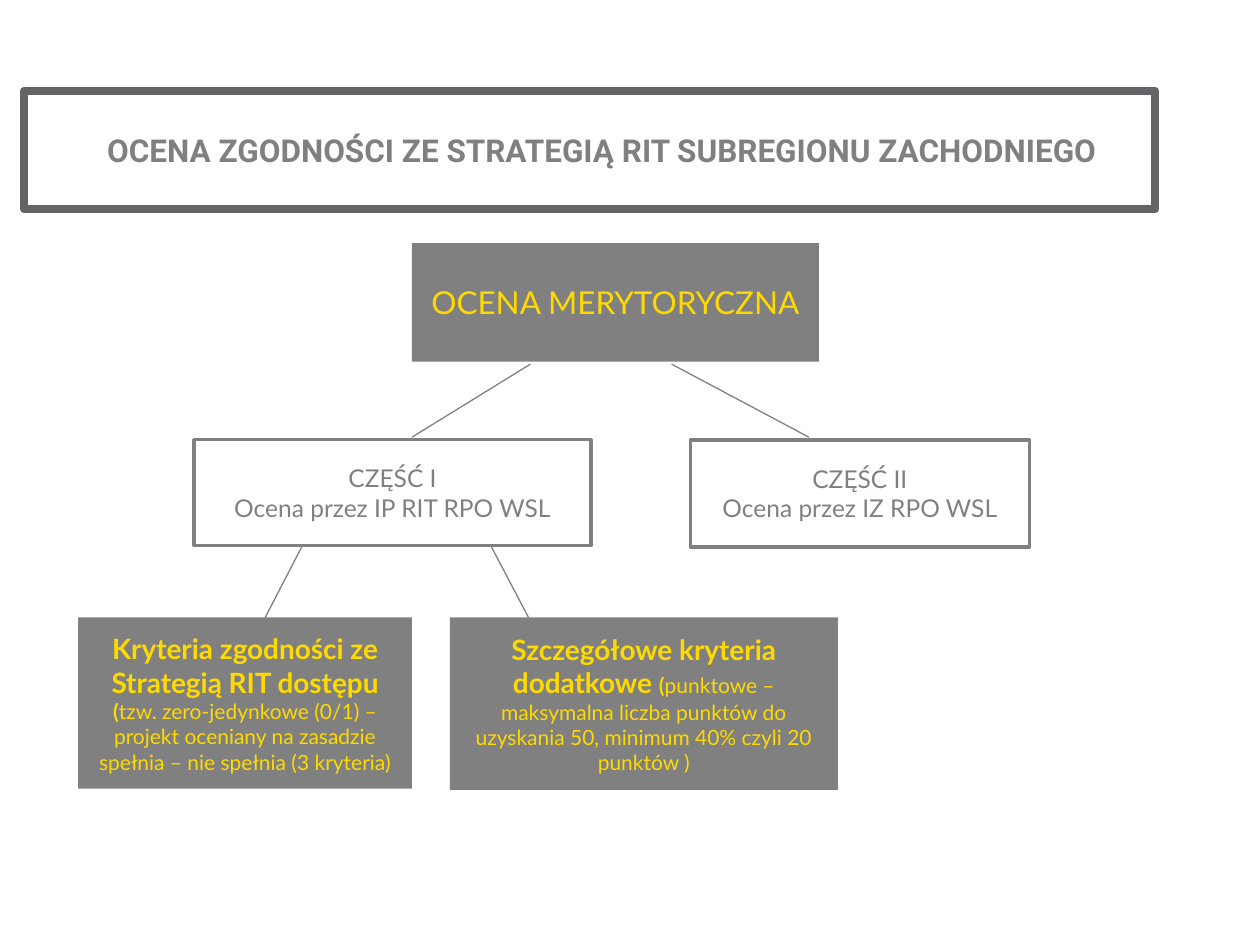
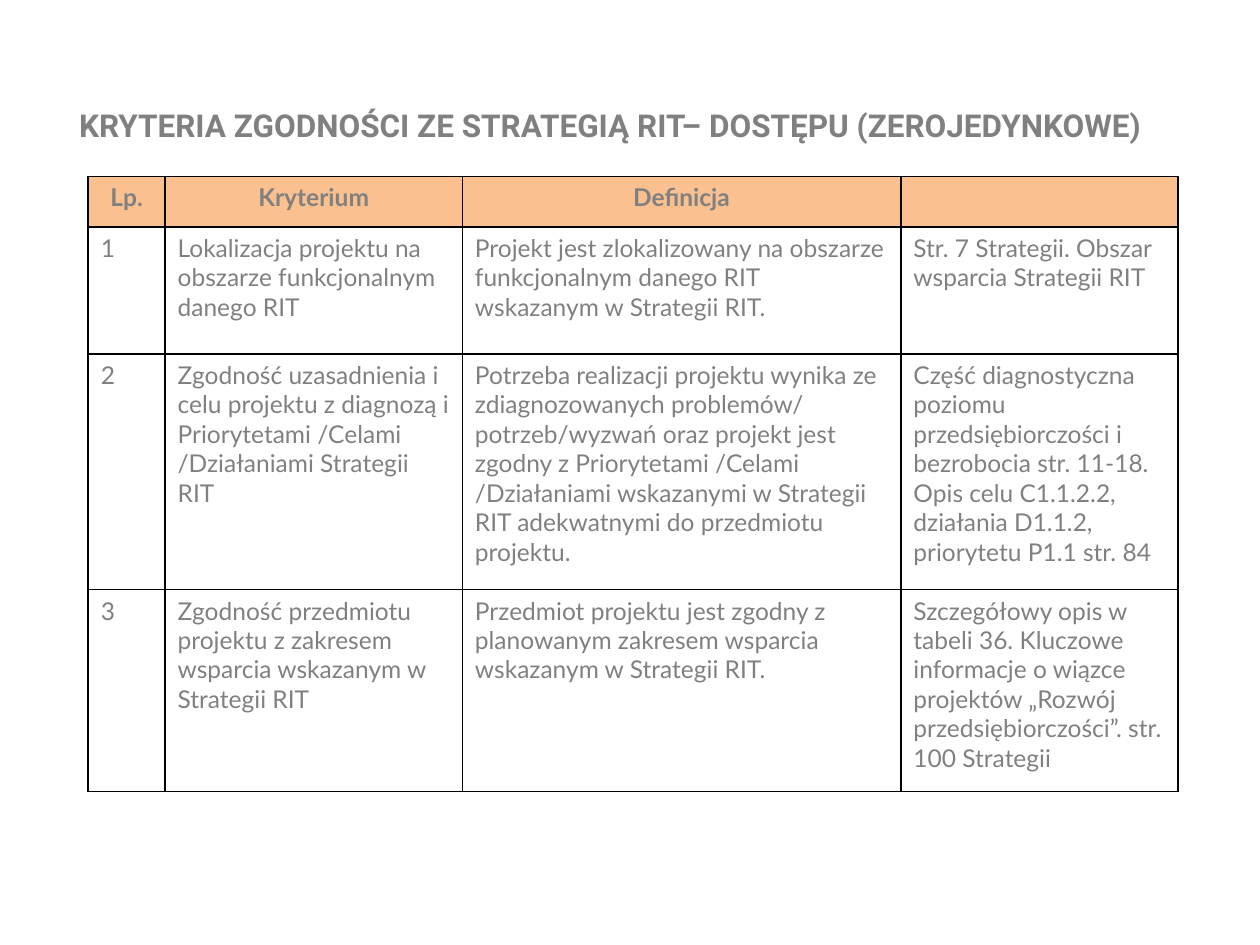
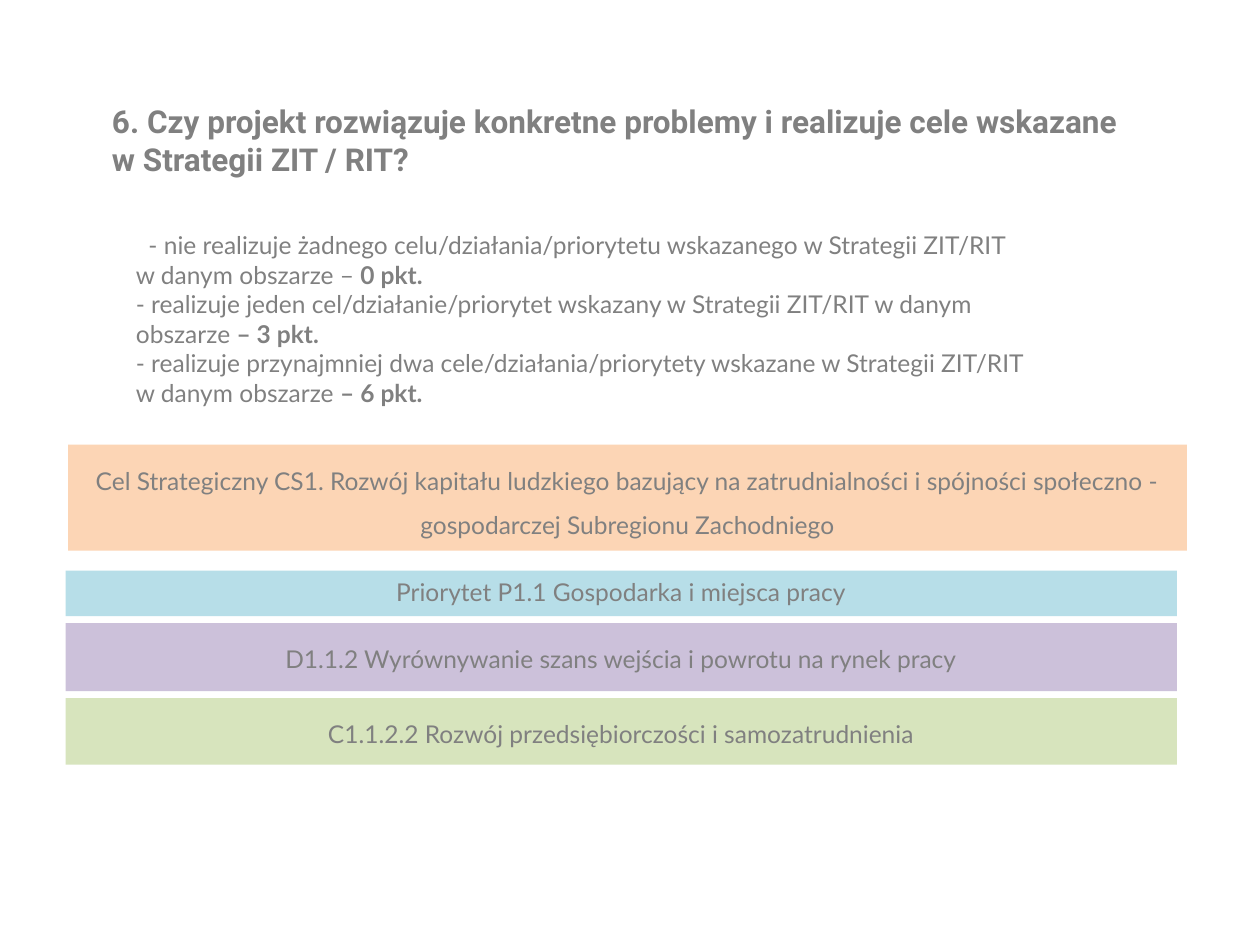
from lxml.etree import SubElement
from pptx import Presentation
from pptx.dml.color import RGBColor
from pptx.enum.shapes import MSO_CONNECTOR, MSO_SHAPE
from pptx.enum.text import MSO_ANCHOR, PP_ALIGN
from pptx.oxml.ns import qn
from pptx.util import Inches, Pt

WIDTH, HEIGHT = Inches(10), Inches(7.5)
COLUMNS, ROWS = 100, 75

COLORS = {
    "grey": "808080", "frame": "636466", "yellow": "FEDA00", "white": "FFFFFF",
    "black": "000000", "header": "FAC090", "peach": "FCD5B5", "blue": "B7DEE8",
    "violet": "CCC1DA", "green": "D7E4BD",
}


def color(name):
    return RGBColor.from_string(COLORS[name])


def across(columns):
    return round(WIDTH * columns / COLUMNS)


def down(rows):
    return round(HEIGHT * rows / ROWS)


class Deck:
    """Style and current slide; places are (left, top, width, height) in grid units."""

    title_font, body_font = "Roboto", "Lato"
    title_size, body_size = 18, 14

    def __init__(self):
        self.presentation = Presentation()
        self.presentation.slide_width = WIDTH
        self.presentation.slide_height = HEIGHT
        self.slide = None

    def new_slide(self):
        blank = self.presentation.slide_layouts[6]
        self.slide = self.presentation.slides.add_slide(blank)

    def place(self, area):
        left, top, width, height = area
        return across(left), down(top), across(width), down(height)

    def fill_text(self, frame, paragraphs, align=PP_ALIGN.LEFT, font=body_font,
                  size=body_size, ink="grey", bold=False, spacing=None):
        """Each paragraph is a text or a list of (text, bold, size) runs."""
        frame.word_wrap = True
        for number, content in enumerate(paragraphs):
            paragraph = frame.paragraphs[0] if number == 0 else frame.add_paragraph()
            paragraph.alignment = align
            if spacing:
                paragraph.line_spacing = spacing
            paragraph.font.size = Pt(size)
            runs = [(content, bold, size)] if isinstance(content, str) else content
            for text, run_bold, run_size in runs:
                run = paragraph.add_run()
                run.text = text
                run.font.name = font
                run.font.size = Pt(run_size)
                run.font.bold = run_bold
                run.font.color.rgb = color(ink)

    def text(self, area, paragraphs, **style):
        frame = self.slide.shapes.add_textbox(*self.place(area)).text_frame
        self.fill_text(frame, paragraphs, **style)
        return frame

    def box(self, area, paragraphs, fill=None, line=None, line_width=2,
            anchor=MSO_ANCHOR.MIDDLE, align=PP_ALIGN.CENTER, **style):
        shape = self.slide.shapes.add_shape(MSO_SHAPE.RECTANGLE, *self.place(area))
        shape.shadow.inherit = False
        if fill:
            shape.fill.solid()
            shape.fill.fore_color.rgb = color(fill)
        else:
            shape.fill.background()
        if line:
            shape.line.color.rgb = color(line)
            shape.line.width = Pt(line_width)
        else:
            shape.line.fill.background()
        shape.text_frame.vertical_anchor = anchor
        self.fill_text(shape.text_frame, paragraphs, align=align, **style)
        return shape.text_frame

    def title_style(self):
        return {"font": self.title_font, "size": self.title_size, "bold": True}

    def title(self, area, wording):
        return self.text(area, [wording], **self.title_style())

    def framed_title(self, area, wording):
        return self.box(area, [wording], line="frame", line_width=4.5,
                        align=PP_ALIGN.LEFT, **self.title_style())

    def branch(self, start, end):
        connector = self.slide.shapes.add_connector(
            MSO_CONNECTOR.STRAIGHT,
            across(start[0]), down(start[1]), across(end[0]), down(end[1]))
        connector.line.color.rgb = color("grey")
        connector.line.width = Pt(0.75)
        SubElement(connector._element.spPr, qn("a:effectLst"))

    def border(self, cell):
        properties = cell._tc.get_or_add_tcPr()
        for side in ("a:lnL", "a:lnR", "a:lnT", "a:lnB"):
            edge = SubElement(properties, qn(side), w=str(Pt(0.96)))
            solid = SubElement(edge, qn("a:solidFill"))
            SubElement(solid, qn("a:srgbClr"), val=COLORS["black"])

    def table(self, left, top, widths, heights, records):
        area = left, top, sum(widths), sum(heights)
        table = self.slide.shapes.add_table(
            len(heights), len(widths), *self.place(area)).table
        table.first_row = table.horz_banding = False
        for column, width in zip(table.columns, widths):
            column.width = across(width)
        for number, (row, height, record) in enumerate(zip(table.rows, heights, records)):
            row.height = down(height)
            heading = number == 0
            for cell, wording in zip(row.cells, record):
                self.border(cell)
                if heading:
                    cell.fill.solid()
                    cell.fill.fore_color.rgb = color("header")
                else:
                    cell.fill.background()
                self.fill_text(cell.text_frame, [wording], bold=heading,
                               align=PP_ALIGN.CENTER if heading else PP_ALIGN.LEFT)


def assessment_slide(deck):
    deck.new_slide()
    heading = deck.framed_title(
        (1.9, 7.2, 89.8, 9.4), "OCENA ZGODNOŚCI ZE STRATEGIĄ RIT SUBREGIONU ZACHODNIEGO")
    heading.margin_left = across(6.6)

    deck.box((32.7, 19.3, 32.3, 9.4), ["OCENA MERYTORYCZNA"],
             fill="grey", ink="yellow", size=18)
    parts = [
        ((15.4, 34.9, 31.5, 8.4), "CZĘŚĆ I", "Ocena przez IP RIT RPO WSL"),
        ((54.8, 34.9, 26.9, 8.5), "CZĘŚĆ II", "Ocena przez IZ RPO WSL"),
    ]
    for area, part, assessor in parts:
        deck.box(area, [part, assessor], fill="white", line="grey")

    criteria = [
        ((6.2, 49, 26.5, 13.6), "Kryteria zgodności ze Strategią RIT dostępu ",
         "tzw. zero-jedynkowe (0/1) – projekt oceniany na zasadzie "
         "spełnia – nie spełnia (3 kryteria)"),
        ((35.7, 49, 30.8, 13.7), "Szczegółowe kryteria dodatkowe ",
         "punktowe – maksymalna liczba punktów do uzyskania 50, "
         "minimum 40% czyli 20 punktów )"),
    ]
    for area, name, details in criteria:
        runs = [(name, True, 16), ("(", True, 12), (details, False, 12)]
        deck.box(area, [runs], fill="grey", ink="yellow")

    deck.branch((42.1, 28.9), (32.7, 34.7))
    deck.branch((53.3, 28.9), (64.2, 34.7))
    deck.branch((24, 43.3), (20.9, 49.3))
    deck.branch((39, 43.4), (42.1, 49.3))


def access_criteria_slide(deck):
    deck.new_slide()
    heading = deck.title((5.3, 5, 93.3, 9),
                         "KRYTERIA ZGODNOŚCI ZE STRATEGIĄ RIT– DOSTĘPU (ZEROJEDYNKOWE)")
    heading.margin_top = down(3.4)
    deck.table(7, 14, [6.1, 23.6, 34.8, 22], [3.7, 10.1, 18.7, 16], [
        ("Lp.", "Kryterium", "Definicja", ""),
        ("1", "Lokalizacja projektu na obszarze funkcjonalnym danego RIT",
         "Projekt jest zlokalizowany na obszarze funkcjonalnym danego RIT "
         "wskazanym w Strategii RIT.",
         "Str. 7 Strategii. Obszar wsparcia Strategii RIT"),
        ("2", "Zgodność uzasadnienia i celu projektu z diagnozą i Priorytetami "
         "/Celami /Działaniami Strategii RIT",
         "Potrzeba realizacji projektu wynika ze zdiagnozowanych problemów/ "
         "potrzeb/wyzwań oraz projekt jest zgodny z Priorytetami /Celami "
         "/Działaniami wskazanymi w Strategii RIT adekwatnymi do przedmiotu projektu.",
         "Część diagnostyczna poziomu przedsiębiorczości i bezrobocia str. 11-18. "
         "Opis celu C1.1.2.2, działania D1.1.2, priorytetu P1.1 str. 84"),
        ("3", "Zgodność przedmiotu projektu z zakresem wsparcia wskazanym w Strategii RIT",
         "Przedmiot projektu jest zgodny z planowanym zakresem wsparcia "
         "wskazanym w Strategii RIT.",
         "Szczegółowy opis w tabeli 36. Kluczowe informacje o wiązce projektów "
         "„Rozwój przedsiębiorczości”. str. 100 Strategii"),
    ])


def scoring_slide(deck):
    deck.new_slide()
    deck.title((7.9, 7.6, 83.5, 7),
               "6. Czy projekt rozwiązuje konkretne problemy i realizuje cele "
               "wskazane w Strategii ZIT / RIT?")
    scores = [
        ("- nie realizuje żadnego celu/działania/priorytetu wskazanego "
         "w Strategii ZIT/RIT w danym obszarze –", " 0 pkt."),
        ("- realizuje jeden cel/działanie/priorytet wskazany "
         "w Strategii ZIT/RIT w danym obszarze ", "– 3 pkt."),
        ("- realizuje przynajmniej dwa cele/działania/priorytety wskazane "
         "w Strategii ZIT/RIT w danym obszarze ", "– 6 pkt."),
    ]
    rules = deck.text((9.8, 17.8, 72.9, 19.6), [
        [(rule, False, deck.body_size), (points, True, deck.body_size)]
        for rule, points in scores])
    rules.paragraphs[0]._p.get_or_add_pPr().set("indent", str(across(1)))

    deck.box((5.4, 35.3, 88.8, 8.4),
             ["Cel Strategiczny CS1. Rozwój kapitału ludzkiego bazujący na zatrudnialności "
              "i spójności społeczno - gospodarczej Subregionu Zachodniego"],
             fill="peach", anchor=MSO_ANCHOR.TOP, spacing=1.5)
    levels = [
        ("Priorytet P1.1 Gospodarka i miejsca pracy", "blue", 3.6, None),
        ("D1.1.2 Wyrównywanie szans wejścia i powrotu na rynek pracy", "violet", 5.4, 1.5),
        ("C1.1.2.2 Rozwój przedsiębiorczości i samozatrudnienia", "green", 5.3, 1.5),
    ]
    top, gap = 45.3, 0.55
    for wording, fill, height, spacing in levels:
        deck.box((5.2, top, 88.2, height), [wording], fill=fill,
                 anchor=MSO_ANCHOR.TOP, spacing=spacing)
        top += height + gap


def main():
    deck = Deck()
    assessment_slide(deck)
    access_criteria_slide(deck)
    scoring_slide(deck)
    deck.presentation.save("out.pptx")


if __name__ == "__main__":
    main()
